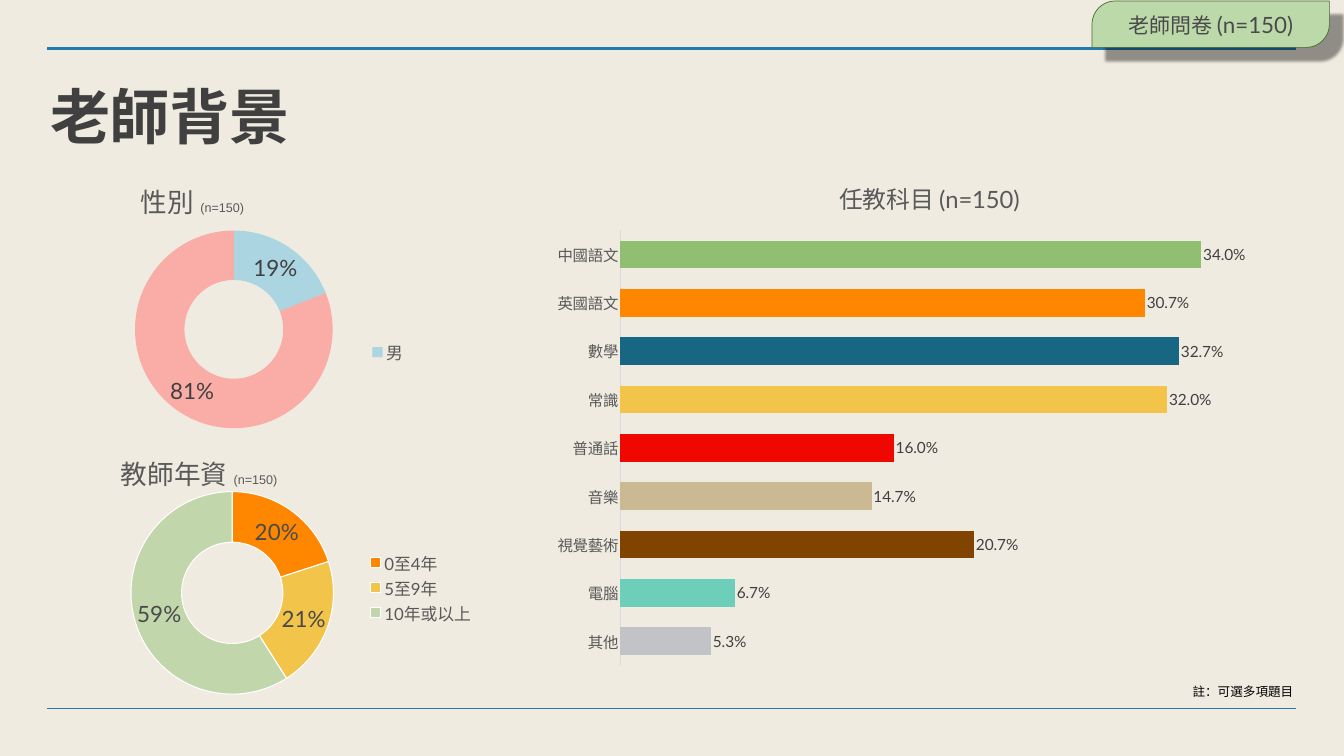
"""Build the teacher background slide with two doughnut charts and one bar chart."""
from lxml import etree
from pptx import Presentation
from pptx import util as u
from pptx.chart import data
from pptx.dml.color import RGBColor
from pptx.enum import chart as c, shapes, text
from pptx.oxml import ns

COLORS = {
    "background": "F0EBE0", "rule": "227AAF", "title": "404040", "grey": "595959",
    "label": "4A4A4B", "black": "000000", "white": "FFFFFF", "axis": "D9D9D9",
    "badge": "BCD9AA", "badge line": "466930", "sky": "53BBE0", "pink": "FF918D",
    "orange": "FF8700", "yellow": "F2C449", "green": "90BF72", "silver": "C2C3C6",
    "teal": "6DCFB9", "brown": "804400", "sand": "CAB992", "red": "F00800", "navy": "176682",
}


def style(font, size, color, name="Lato", bold=False):
    font.size, font.name, font.bold = u.Pt(size), name, bold
    font.color.rgb = RGBColor.from_string(COLORS[color])


def place(parent, index, **fractions):
    for old in parent.findall(ns.qn("c:layout")):
        parent.remove(old)
    layout = etree.Element(ns.qn("c:layout"))
    manual = etree.SubElement(layout, ns.qn("c:manualLayout"))
    if parent.tag == ns.qn("c:plotArea"):
        etree.SubElement(manual, ns.qn("c:layoutTarget")).set("val", "inner")
    for mode in ("xMode", "yMode"):
        etree.SubElement(manual, ns.qn(f"c:{mode}")).set("val", "edge")
    for key, value in fractions.items():
        etree.SubElement(manual, ns.qn(f"c:{key}")).set("val", str(value))
    parent.insert(index, layout)


presentation = Presentation()
presentation.slide_width, presentation.slide_height = u.Inches(26.67), u.Inches(15)
slide = presentation.slides.add_slide(presentation.slide_layouts[6])
slide.background.fill.solid()
slide.background.fill.fore_color.rgb = RGBColor.from_string(COLORS["background"])

for y, width in ((0.97, 4), (14.06, 1)):
    rule = slide.shapes.add_connector(
        shapes.MSO_CONNECTOR.STRAIGHT, u.Inches(0.94), u.Inches(y), u.Inches(25.72), u.Inches(y))
    rule.line.color.rgb = RGBColor.from_string(COLORS["rule"])
    rule.line.width = u.Pt(width)
    etree.SubElement(rule.element.spPr, ns.qn("a:effectLst"))

title = slide.shapes.add_textbox(u.Inches(0.94), u.Inches(1.8), u.Inches(22.89), u.Inches(3.53))
note = slide.shapes.add_textbox(u.Inches(23.6), u.Inches(13.54), u.Inches(2.13), u.Inches(0.36))
badge = slide.shapes.add_shape(
    shapes.MSO_SHAPE.ROUND_2_DIAG_RECTANGLE,
    u.Inches(21.67), u.Inches(0.02), u.Inches(4.71), u.Inches(0.92))
for shape in (title, note, badge):
    frame = shape.text_frame
    frame.margin_left = frame.margin_right = u.Inches(0.06)
    frame.margin_top = frame.margin_bottom = u.Inches(0.06)
    frame.word_wrap = shape is not note

title.text_frame.text = "老師背景"
paragraph = title.text_frame.paragraphs[0]
paragraph.line_spacing = 0.8
style(paragraph.runs[0].font, 86, "title", "Arial", True)
paragraph.runs[0].font._element.set("spc", "-90")

note.text_frame.text = "註：可選多項題目"
note.text_frame.vertical_anchor = text.MSO_ANCHOR.MIDDLE
paragraph = note.text_frame.paragraphs[0]
paragraph.alignment = text.PP_ALIGN.CENTER
paragraph.space_before = u.Pt(10)
style(paragraph.runs[0].font, 18, "black", "Arial")

badge.adjustments[0], badge.adjustments[1] = 0.5, 0
badge.fill.solid()
badge.fill.fore_color.rgb = RGBColor.from_string(COLORS["badge"])
badge.line.color.rgb = RGBColor.from_string(COLORS["badge line"])
badge.line.width = u.Pt(1)
badge.shadow.inherit = False
shadow = etree.SubElement(
    badge.element.spPr.find(ns.qn("a:effectLst")), ns.qn("a:outerShdw"),
    blurRad=str(u.Pt(4)), dist=str(u.Pt(27)), dir="2700000", algn="tl", rotWithShape="0")
shadow_color = etree.SubElement(shadow, ns.qn("a:srgbClr"), val=COLORS["black"])
etree.SubElement(shadow_color, ns.qn("a:alpha"), val="40000")
badge.text_frame.vertical_anchor = text.MSO_ANCHOR.MIDDLE
paragraph = badge.text_frame.paragraphs[0]
paragraph.alignment = text.PP_ALIGN.CENTER
for words, size in (("老師問卷 ", 30), ("(n=150)", 32)):
    run = paragraph.add_run()
    run.text = words
    style(run.font, size, "label")

charts = [
    dict(kind=c.XL_CHART_TYPE.DOUGHNUT, at=(2.16, 3.16, 6.05, 6.43), name="性別",
         points=[("男", 19, "sky", 44), ("女", 81, "pink", 69)],
         title_font=(38, 18, "Arial"), title_at=(0.1, 0.06), plot=(0.08, 0.22, 0.66, 0.61),
         legend=(0.84, 0.55, 0.15, 0.09), label=(32, "title"), line=None, hidden=[1]),
    dict(kind=c.XL_CHART_TYPE.DOUGHNUT, at=(1.89, 7.5, 7.88, 6.56), name="教師年資",
         points=[("0至4年", 20, "orange", 100), ("5至9年", 21, "yellow", 100),
                 ("10年或以上", 59, "green", 47)],
         title_font=(38, 18, "Arial"), title_at=(0.06, 0.22), plot=(0.09, 0.34, 0.51, 0.62),
         legend=(0.68, 0.52, 0.28, 0.23), label=(32, "label"), line="white", hidden=[]),
    dict(kind=c.XL_CHART_TYPE.BAR_CLUSTERED, at=(10.77, 3.13, 15.41, 10.28), name="任教科目",
         points=[("其他", 0.053, "silver", 100), ("電腦", 0.067, "teal", 100),
                 ("視覺藝術", 0.207, "brown", 100), ("音樂", 0.147, "sand", 100),
                 ("普通話", 0.16, "red", 100), ("常識", 0.32, "yellow", 100),
                 ("數學", 0.327, "navy", 100), ("英國語文", 0.307, "orange", 100),
                 ("中國語文", 0.34, "green", 100)],
         title_font=(34, 34, "Lato"), title_at=(0.38, 0.04), plot=(0.1, 0.14, 0.88, 0.84),
         legend=None, label=(22, "title"), line=None, hidden=[]),
]

for item in charts:
    is_bar = item["kind"] == c.XL_CHART_TYPE.BAR_CLUSTERED
    chart_data = data.CategoryChartData(number_format="0.0%" if is_bar else "General")
    chart_data.categories = [point[0] for point in item["points"]]
    chart_data.add_series(f"{item['name']} (n=150)", [point[1] for point in item["points"]])
    chart = slide.shapes.add_chart(
        item["kind"], *[u.Inches(length) for length in item["at"]], chart_data).chart
    style(chart.font, 10, "black")
    chart.has_title = True
    large, small, font_name = item["title_font"]
    paragraph = chart.chart_title.text_frame.paragraphs[0]
    for words, size in ((f"{item['name']} ", large), ("(n=150)", small)):
        run = paragraph.add_run()
        run.text = words
        style(run.font, size, "grey", font_name)
    place(chart.chart_title._element, 1, **dict(zip("xy", item["title_at"])))
    place(chart.element.find(".//" + ns.qn("c:plotArea")), 0, **dict(zip("xywh", item["plot"])))

    chart.has_legend = item["legend"] is not None
    if chart.has_legend:
        chart.legend.position = c.XL_LEGEND_POSITION.RIGHT
        chart.legend.include_in_layout = True
        style(chart.legend.font, 24, "grey")
        place(chart.legend._element, 1, **dict(zip("xywh", item["legend"])))
        for index in item["hidden"]:
            entry = etree.Element(ns.qn("c:legendEntry"))
            etree.SubElement(entry, ns.qn("c:idx")).set("val", str(index))
            etree.SubElement(entry, ns.qn("c:delete")).set("val", "1")
            chart.legend._element.insert(1, entry)

    plot = chart.plots[0]
    plot.vary_by_categories = not is_bar
    plot.has_data_labels = True
    labels = plot.data_labels
    style(labels.font, *item["label"])
    labels.show_value, labels.show_percentage = is_bar, not is_bar
    labels.number_format = "0.0%" if is_bar else "0%"
    labels.number_format_is_linked = False
    for index, (category, value, color, opacity) in enumerate(item["points"]):
        form = plot.series[0].points[index].format
        form.fill.solid()
        form.fill.fore_color.rgb = RGBColor.from_string(COLORS[color])
        if opacity < 100:
            fill_color = form._element.find(".//" + ns.qn("a:srgbClr"))
            etree.SubElement(fill_color, ns.qn("a:alpha"), val=str(opacity * 1000))
        if item["line"]:
            form.line.color.rgb = RGBColor.from_string(COLORS[item["line"]])
            form.line.width = u.Pt(1.5)
        else:
            form.line.fill.background()

    if is_bar:
        plot.gap_width = 75
        labels.position = c.XL_LABEL_POSITION.OUTSIDE_END
        chart.value_axis.visible = False
        chart.value_axis.has_major_gridlines = False
        chart.value_axis.minimum_scale, chart.value_axis.maximum_scale = 0, 0.4
        axis = chart.category_axis
        axis.major_tick_mark = c.XL_TICK_MARK.NONE
        style(axis.tick_labels.font, 22, "grey", "Arial")
        axis.format.line.color.rgb = RGBColor.from_string(COLORS["axis"])
        axis.format.line.width = u.Pt(0.75)

presentation.save("out.pptx")
